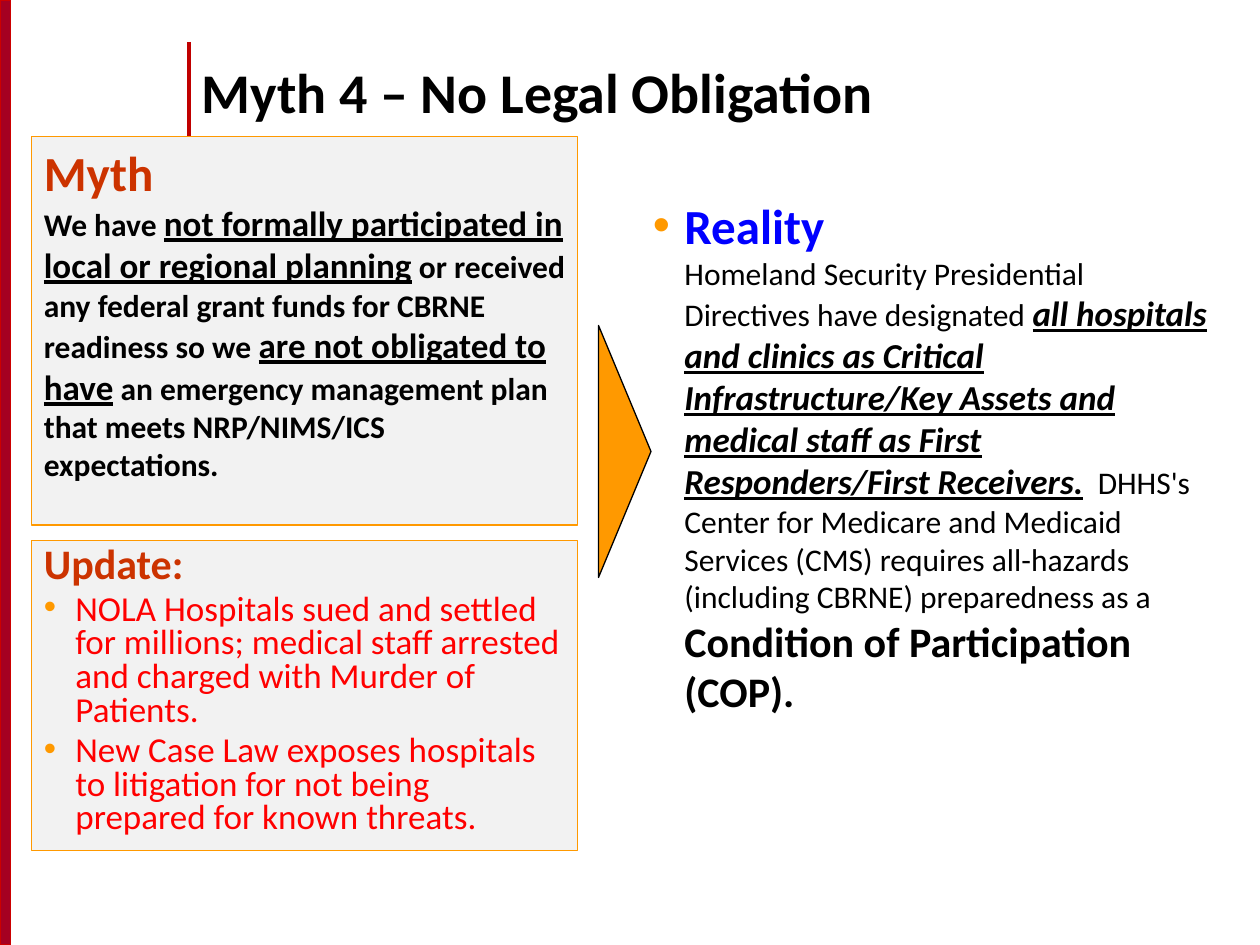
"""Build the "Myth 4 – No Legal Obligation" slide."""
from pptx import Presentation, util as u
from pptx.dml.color import RGBColor
from pptx.enum import shapes, text
from pptx.oxml import parse_xml
from pptx.oxml.ns import nsdecls

COLORS = {"edge": "A50021", "edge_line": "CC0000", "rule": "C00000",
          "panel": "F2F2F2", "accent": "FF9900", "myth": "CC3300",
          "reality": "0000FF", "update": "FF0000", "ink": "000000"}
FONT = "Calibri"
INDENT = 18
BODY = {"size": 18, "color": "ink"}
STRONG = {"size": 18, "color": "ink", "bold": True}
STRESSED = {"size": 20, "color": "ink", "bold": True, "underline": True}
LOUD = {**STRESSED, "italic": True}
UPDATE = {"size": 20, "color": "update"}

MYTH = [
    ("Myth", {"size": 28, "color": "myth", "bold": True}), None,
    ("We have ", STRONG),
    ("not formally participated in local or regional planning", STRESSED),
    (" or received any federal grant funds for CBRNE readiness so we ", STRONG),
    ("are not obligated to have", STRESSED),
    (" an emergency management plan that meets NRP/NIMS/ICS expectations.", STRONG),
]
REALITY = [
    ("Reality", {"size": 28, "color": "reality", "bold": True}), None,
    ("Homeland Security Presidential Directives have designated ", BODY),
    ("all hospitals and clinics as Critical Infrastructure/Key Assets and "
     "medical staff as First Responders/First Receivers.", LOUD),
    ("  DHHS's Center for Medicare and Medicaid Services (CMS) requires "
     "all-hazards (including CBRNE) preparedness as a ", BODY),
    ("Condition of Participation (COP).", {"size": 24, "color": "ink", "bold": True}),
]
UPDATE_HEAD = [("Update:", {"size": 24, "color": "myth", "bold": True})]
UPDATES = [
    "NOLA Hospitals sued and settled for millions; medical staff arrested "
    "and charged with Murder of Patients.",
    "New Case Law exposes hospitals to litigation for not being prepared "
    "for known threats.",
]


def rgb(name):
    """Return the named colour."""
    return RGBColor.from_string(COLORS[name])


def add_figure(page, kind, place, fill, line, width=0.75):
    """Add a filled, outlined preset shape without a shadow."""
    figure = page.shapes.add_shape(kind, *map(u.Pt, place))
    figure.shadow.inherit = False
    figure.fill.solid()
    figure.fill.fore_color.rgb = rgb(fill)
    figure.line.color.rgb = rgb(line)
    figure.line.width = u.Pt(width)
    return figure


def add_rule(page, x, top, bottom):
    """Add the vertical rule beside the title."""
    rule = page.shapes.add_connector(
        shapes.MSO_CONNECTOR.STRAIGHT, *map(u.Pt, (x, top, x, bottom)))
    rule.line.color.rgb = rgb("rule")
    rule.line.width = u.Pt(2.25)
    rule._element.spPr.append(parse_xml(f"<a:effectLst {nsdecls('a')}/>"))


def add_bullet(para):
    """Give a paragraph a hanging accent-coloured bullet."""
    props = para._p.get_or_add_pPr()
    props.set("marL", str(u.Pt(INDENT)))
    props.set("indent", str(-u.Pt(INDENT)))
    for xml in (f'<a:buClr {nsdecls("a")}><a:srgbClr val="{COLORS["accent"]}"/></a:buClr>',
                f'<a:buFont {nsdecls("a")} typeface="Arial"/>',
                f'<a:buChar {nsdecls("a")} char="•"/>'):
        props.append(parse_xml(xml))


def add_spans(para, spans):
    """Add formatted runs, with a line break for each None."""
    for span in spans:
        if span is None:
            para.add_line_break()
            continue
        words, style = span
        run = para.add_run()
        run.text = words
        run.font.name = FONT
        run.font.color.rgb = rgb(style["color"])
        run.font.size = u.Pt(style["size"])
        for name in ("bold", "italic", "underline"):
            setattr(run.font, name, style.get(name, False))


def fill_text(box, paragraphs, anchor=text.MSO_ANCHOR.TOP, spacing=1.0):
    """Write (spans, bulleted) paragraphs into a box."""
    frame = box.text_frame
    frame.word_wrap = True
    frame.vertical_anchor = anchor
    for index, (spans, bulleted) in enumerate(paragraphs):
        para = frame.add_paragraph() if index else frame.paragraphs[0]
        if bulleted:
            add_bullet(para)
        layout = {"alignment": text.PP_ALIGN.LEFT, "line_spacing": spacing,
                  "space_before": u.Pt(4 if index else 0)}
        for name, value in layout.items():
            setattr(para, name, value)
        add_spans(para, spans)


def add_text(page, place, paragraphs, **options):
    """Add a plain text box."""
    box = page.shapes.add_textbox(*map(u.Pt, place))
    fill_text(box, paragraphs, **options)


def add_panel(page, place, paragraphs, **options):
    """Add a grey panel holding text."""
    panel = add_figure(page, shapes.MSO_SHAPE.RECTANGLE, place, "panel", "accent")
    fill_text(panel, paragraphs, **options)


def main():
    """Build and save the slide."""
    deck = Presentation()
    deck.slide_width, deck.slide_height = u.Pt(720), u.Pt(540)
    page = deck.slides.add_slide(deck.slide_layouts[6])

    add_figure(page, shapes.MSO_SHAPE.RECTANGLE, (0, 0, 6, 540),
               "edge", "edge_line", 1)
    add_rule(page, 108, 24, 84)
    add_panel(page, (18, 78, 312, 222), [(MYTH, False)])
    add_text(page, (366, 108, 336, 330), [(REALITY, True)])
    arrow = add_figure(page, shapes.MSO_SHAPE.ISOSCELES_TRIANGLE,
                       (285, 243, 144, 30), "accent", "ink")
    arrow.rotation = 90
    title = [("Myth 4 – No Legal Obligation",
              {"size": 32, "color": "ink", "bold": True})]
    add_text(page, (108, 18, 594, 74), [(title, False)],
             anchor=text.MSO_ANCHOR.MIDDLE, spacing=0.85)
    bullets = [([(words, UPDATE)], True) for words in UPDATES]
    add_panel(page, (18, 309, 312, 177), [(UPDATE_HEAD, False)] + bullets,
              spacing=0.8)
    deck.save("out.pptx")


if __name__ == "__main__":
    main()
